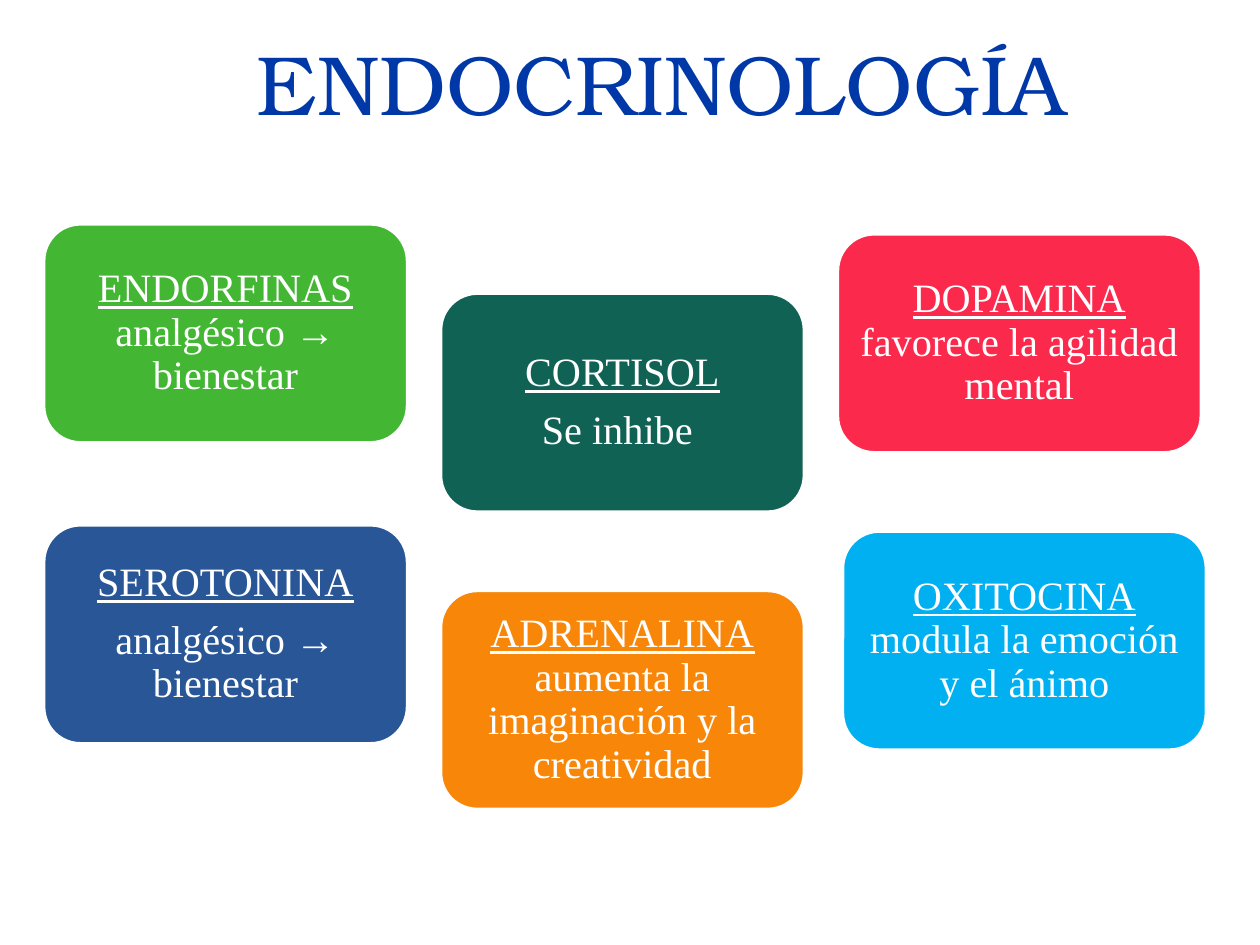
from pptx import Presentation
from pptx import util as u
from pptx.dml.color import RGBColor
from pptx.enum import shapes, text

Pt = u.Pt


def color(value):
    return RGBColor.from_string(value)


presentation = Presentation()
presentation.slide_width = Pt(720)
presentation.slide_height = Pt(540)
slide = presentation.slides.add_slide(presentation.slide_layouts[6])

title = slide.shapes.add_textbox(Pt(72), Pt(3.6), Pt(612), Pt(90))
frame = title.text_frame
frame.word_wrap = True
frame.vertical_anchor = text.MSO_ANCHOR.MIDDLE
frame.margin_bottom = Pt(7.2)
paragraph = frame.paragraphs[0]
paragraph.text = "ENDOCRINOLOGÍA"
paragraph.alignment = text.PP_ALIGN.CENTER
paragraph.font.name = "TeX Gyre Bonum"
paragraph.font.size = Pt(48)
paragraph.font.color.rgb = color("0038A8")

hormones = [
    (25.2, 128.2, "43B634", [["ENDORFINAS ", "analgésico → bienestar"]]),
    (252, 167.8, "106254", [["CORTISOL"], ["", "Se inhibe "]]),
    (478.8, 133.9, "FB294C", [["DOPAMINA", " favorece la agilidad mental"]]),
    (25.2, 300.2, "295697", [["SEROTONINA"], ["", "analgésico → bienestar"]]),
    (252, 337.7, "F78609", [["ADRENALINA", " aumenta la imaginación y la creatividad"]]),
    (481.7, 303.8, "00B0F0", [["OXITOCINA", " modula la emoción y el ánimo"]]),
]

for left, top, fill, paragraphs in hormones:
    card = slide.shapes.add_shape(
        shapes.MSO_SHAPE.FLOWCHART_ALTERNATE_PROCESS,
        Pt(left), Pt(top), Pt(207.4), Pt(124.6))
    card.shadow.inherit = False
    card.fill.solid()
    card.fill.fore_color.rgb = color(fill)
    card.line.color.rgb = color("FFFFFF")
    card.line.width = Pt(1.5)
    frame = card.text_frame
    frame.word_wrap = True
    frame.vertical_anchor = text.MSO_ANCHOR.MIDDLE
    frame.margin_left = frame.margin_right = Pt(1.2)
    frame.margin_top = frame.margin_bottom = Pt(1.2)
    for index, parts in enumerate(paragraphs):
        paragraph = frame.add_paragraph() if index else frame.paragraphs[0]
        paragraph.alignment = text.PP_ALIGN.CENTER
        paragraph.line_spacing = 0.9
        paragraph.space_after = Pt(8)
        paragraph.font.name = "Times New Roman"
        paragraph.font.size = Pt(23)
        paragraph.font.color.rgb = color("FFFFFF")
        for position, wording in enumerate(parts):
            if wording:
                run = paragraph.add_run()
                run.text = wording
                run.font.underline = position == 0

presentation.save("out.pptx")
